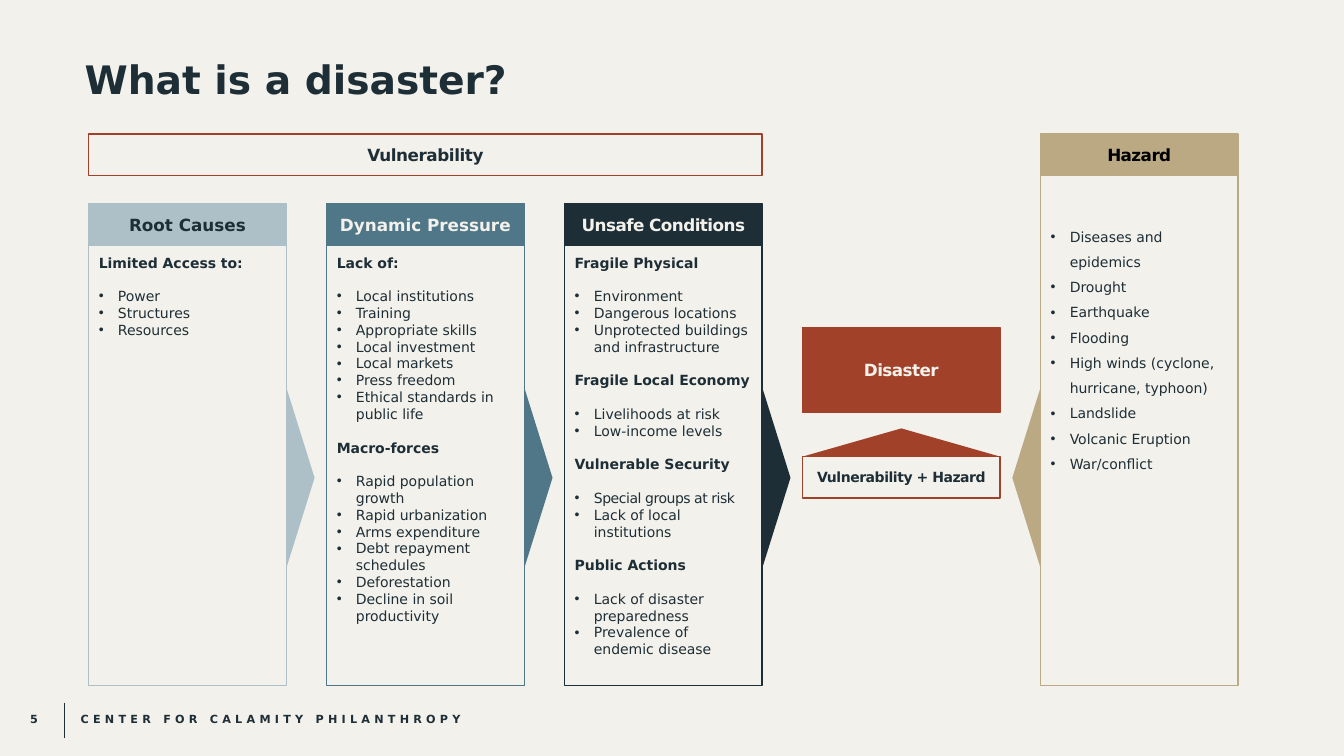
from pptx import Presentation
from pptx import util as u
from pptx.dml.color import RGBColor
from pptx.enum import shapes, text
from pptx.oxml.ns import qn
from lxml import etree

FONT = "DejaVu Sans"
INK = {"paper": "F3F1EB", "dark": "1E2E36", "pale": "ADBFC7", "steel": "507788",
       "rust": "A1412A", "sand": "BBA983", "black": "000000"}

# Grid in inches: five columns of equal pitch
LEFT, PITCH, WIDE = 0.88, 2.36, 1.96
TOP, BASE, BAR, TIP = 1.33, 6.8, 0.41, 0.28
BLANK = 12  # points of one empty line
HANG = 0.19

ROOT = [("Limited Access to:", ["Power", "Structures", "Resources"])]
PRESS = [
    ("Lack of:", ["Local institutions", "Training", "Appropriate skills",
                  "Local investment", "Local markets", "Press freedom",
                  "Ethical standards in public life"]),
    ("Macro-forces", ["Rapid population growth", "Rapid urbanization",
                      "Arms expenditure", "Debt repayment schedules",
                      "Deforestation", "Decline in soil productivity"]),
]
UNSAFE = [
    ("Fragile Physical", ["Environment", "Dangerous locations",
                          "Unprotected buildings and infrastructure"]),
    ("Fragile Local Economy", ["Livelihoods at risk", "Low-income levels"]),
    ("Vulnerable Security", ["Special groups at risk", "Lack of local institutions"]),
    ("Public Actions", ["Lack of disaster preparedness",
                        "Prevalence of endemic disease"]),
]
RISKS = [(None, ["Diseases and epidemics", "Drought", "Earthquake", "Flooding",
                 "High winds (cyclone, hurricane, typhoon)", "Landslide",
                 "Volcanic Eruption", "War/conflict"])]
TIGHT = {"Special groups at risk": -0.3}


def tint(name):
    return RGBColor.from_string(INK[name])


def col(n):
    return LEFT + n * PITCH


def place(item, x, y, w, h):
    item.left, item.top, item.width, item.height = map(u.Inches, (x, y, w, h))


def write(para, words, size, ink="dark", bold=True, track=0):
    run = para.add_run()
    run.text = words
    font = run.font
    font.name, font.size, font.bold = FONT, u.Pt(size), bold
    font.color.rgb = tint(ink)
    if track:
        run._r.get_or_add_rPr().set("spc", str(round(track * 100)))


def shape(slide, kind, x, y, w, h, fill=None, line=None):
    item = slide.shapes.add_shape(kind, *map(u.Inches, (x, y, w, h)))
    item.shadow.inherit = False
    if fill:
        item.fill.solid()
        item.fill.fore_color.rgb = tint(fill)
    else:
        item.fill.background()
    if line:
        item.line.color.rgb = tint(line)
        item.line.width = u.Pt(1)
    else:
        item.line.fill.background()
    return item


def box(slide, x, y, w, h, words, edge, fill=None, ink="dark", size=12, track=0):
    """Framed box with one centred label."""
    item = shape(slide, shapes.MSO_SHAPE.RECTANGLE, x, y, w, h, fill, edge)
    frame = item.text_frame
    frame.word_wrap = True
    frame.vertical_anchor = text.MSO_ANCHOR.MIDDLE
    para = frame.paragraphs[0]
    para.alignment = text.PP_ALIGN.CENTER
    write(para, words, size, ink, track=track)


def point(slide, x, y, long, fill, turn=0):
    """Triangle centred on x, y."""
    item = shape(slide, shapes.MSO_SHAPE.ISOSCELES_TRIANGLE,
                 x - long / 2, y - TIP / 2, long, TIP, fill)
    item.rotation = turn


def mark(para, dot):
    """Hanging bullet, or none."""
    props = para._p.get_or_add_pPr()
    hang = u.Inches(HANG) if dot else 0
    props.set("marL", str(hang))
    props.set("indent", str(-hang))
    if dot:
        etree.SubElement(props, qn("a:buFont")).set("typeface", "Arial")
        etree.SubElement(props, qn("a:buChar")).set("char", "•")
    else:
        etree.SubElement(props, qn("a:buNone"))


def fill_list(frame, groups, pace):
    rows = []
    for head, items in groups:
        if head:
            rows.append((head, True, BLANK))
        rows += [(item, False, BLANK if head and not n else 0)
                 for n, item in enumerate(items)]
    for n, (words, bold, gap) in enumerate(rows):
        para = frame.add_paragraph() if n else frame.paragraphs[0]
        mark(para, not bold)
        para.alignment = text.PP_ALIGN.LEFT
        para.line_spacing = pace
        para.space_before = u.Pt(gap if n else 0)
        para.space_after = u.Pt(0)
        write(para, words, 10, bold=bold, track=TIGHT.get(words, 0))


def panel(slide, body, n, top, label, groups, hue, ink, track=0,
          inset=0.09, pace=1.0, turn=90):
    """Header bar, list below it, and a side arrow."""
    x = col(n)
    box(slide, x, top, WIDE, BAR, label, hue, hue, ink, track=track)
    place(body, x, top + BAR, WIDE, BASE - top - BAR)
    body.line.color.rgb = tint(hue)
    body.line.width = u.Pt(1)
    frame = body.text_frame
    frame.auto_size = text.MSO_AUTO_SIZE.NONE
    frame.word_wrap = True
    frame.vertical_anchor = text.MSO_ANCHOR.TOP
    frame.margin_top = u.Inches(inset)
    fill_list(frame, groups, pace)
    side = x + WIDE + TIP / 2 if turn == 90 else x - TIP / 2
    point(slide, side, 4.74, 1.79, hue, turn)


def title(slide):
    head = slide.shapes.title
    place(head, 0.74, 0.55, 12.04, 0.46)
    frame = head.text_frame
    frame.auto_size = text.MSO_AUTO_SIZE.NONE
    frame.vertical_anchor = text.MSO_ANCHOR.TOP
    para = frame.paragraphs[0]
    para.alignment = text.PP_ALIGN.LEFT
    para.line_spacing = 0.9
    write(para, "What is a disaster?", 28)


def result(slide, x):
    """Disaster box with the sum that points up to it."""
    box(slide, x, 3.25, WIDE, 0.84, "Disaster", "rust", "rust", "paper", track=-0.4)
    point(slide, x + WIDE / 2, 4.25 + TIP / 2, WIDE, "rust")
    box(slide, x, 4.53, WIDE, BAR, "Vulnerability + Hazard", "rust",
        size=10, track=-0.3)


def footer(slide):
    for x, w, words, track in ((0.3, 0.3, "5", 0),
                               (0.8, 4.59, "CENTER FOR CALAMITY PHILANTHROPY", 3)):
        note = slide.shapes.add_textbox(*map(u.Inches, (x, 7.07, w, 0.13)))
        frame = note.text_frame
        frame.word_wrap = True
        frame.margin_left = frame.margin_right = 0
        frame.margin_top = frame.margin_bottom = 0
        write(frame.paragraphs[0], words, 8, track=track)
    rule = slide.shapes.add_connector(
        shapes.MSO_CONNECTOR.STRAIGHT, *map(u.Inches, (0.64, 6.97, 0.64, 7.32)))
    rule.line.color.rgb = tint("dark")
    rule.line.width = u.Pt(1.25)
    etree.SubElement(rule._element.spPr, qn("a:effectLst"))


def main():
    deck = Presentation()
    deck.slide_width, deck.slide_height = u.Inches(13.33), u.Inches(7.5)
    slide = deck.slides.add_slide(deck.slide_layouts.get_by_name("Comparison"))
    slide.background.fill.solid()
    slide.background.fill.fore_color.rgb = tint("paper")
    title(slide)
    one, two, three, four = list(slide.placeholders)[1:5]

    # Vulnerability and its three stages
    box(slide, LEFT, TOP, 2 * PITCH + WIDE, BAR, "Vulnerability", "rust", track=-0.3)
    panel(slide, one, 0, 2.02, "Root Causes", ROOT, "pale", "dark")
    panel(slide, two, 1, 2.02, "Dynamic Pressure", PRESS, "steel", "paper")
    panel(slide, three, 2, 2.02, "Unsafe Conditions", UNSAFE, "dark", "paper", -0.4)

    # Outcome and hazard
    result(slide, col(3))
    panel(slide, four, 4, TOP, "Hazard", RISKS, "sand", "black", -0.4,
          inset=0.44, pace=1.5, turn=270)
    footer(slide)
    deck.save("out.pptx")


if __name__ == "__main__":
    main()
